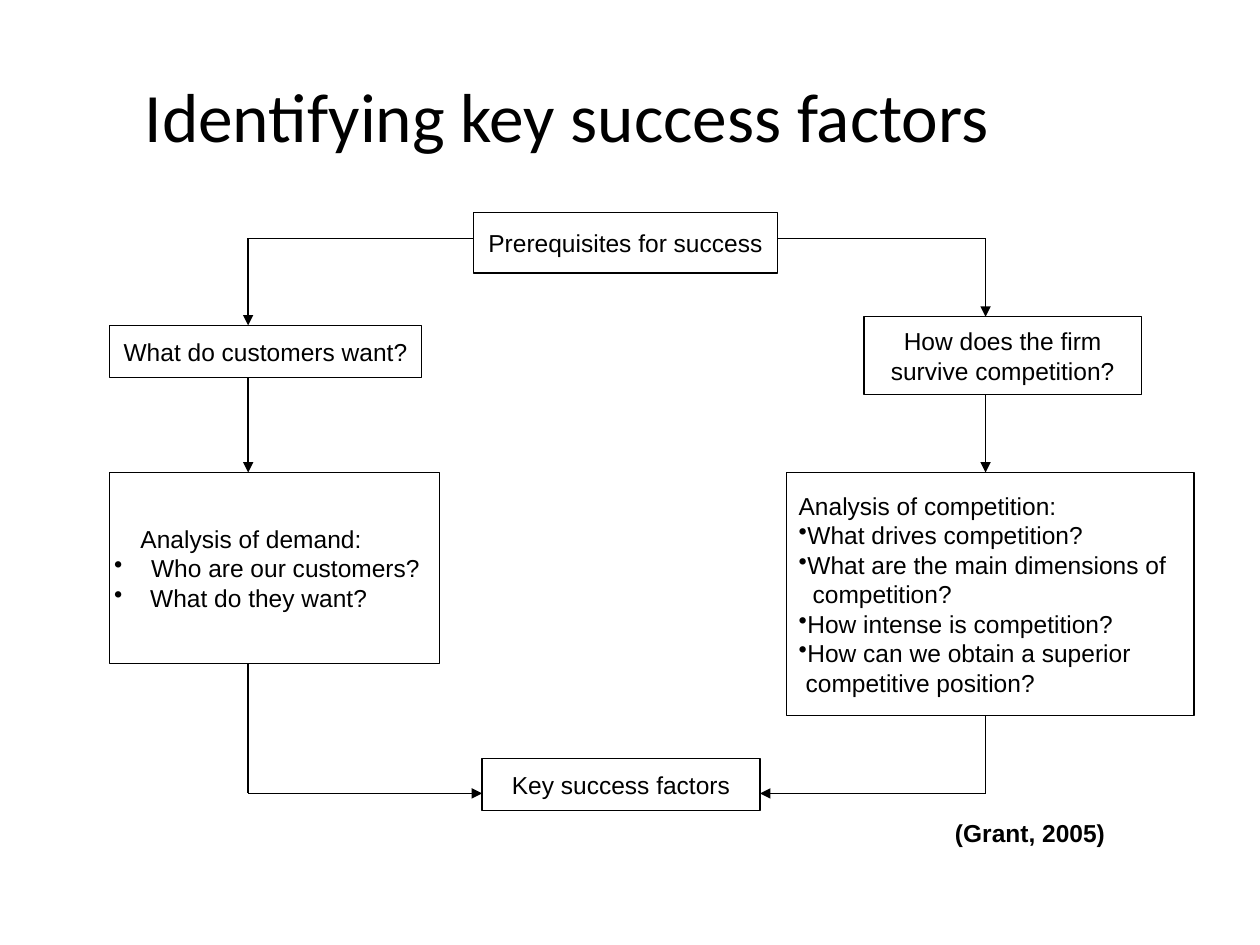
from itertools import pairwise

from lxml import etree
from pptx import Presentation
from pptx.dml.color import RGBColor
from pptx.enum.shapes import MSO_CONNECTOR, MSO_SHAPE
from pptx.enum.text import MSO_ANCHOR, PP_ALIGN
from pptx.oxml.ns import qn
from pptx.util import Pt

CENTER, LEFT = PP_ALIGN.CENTER, PP_ALIGN.LEFT
MIDDLE, TOP = MSO_ANCHOR.MIDDLE, MSO_ANCHOR.TOP
RECTANGLE, STRAIGHT = MSO_SHAPE.RECTANGLE, MSO_CONNECTOR.STRAIGHT

THEME = {
    "ink": RGBColor(0, 0, 0),
    "title_font": "Calibri", "title_size": 39.6,
    "body_font": "Arial", "body_size": 14,
    "line_width": 0.75,
}

# Each paragraph: text, left margin, hanging bullet width (0 = no bullet)
DEMAND = [
    ("Analysis of demand:", 15, 0),
    ("Who are our customers?", 21, 21),
    ("What do they want?", 20.5, 20.5),
]
COMPETITION = [
    ("Analysis of competition:", 0, 0),
    ("What drives competition?", 5, 5),
    ("What are the main dimensions of", 5, 5),
    ("competition?", 8, 0),
    ("How intense is competition?", 5, 5),
    ("How can we obtain a superior", 5, 5),
    ("competitive position?", 4, 0),
]

# Each box: left, top, width, height
BOXES = {
    "prerequisites": (270.7, 121.4, 173.6, 34.7),
    "customers": (62.6, 186, 178.4, 29.6),
    "survival": (493.7, 181, 158.6, 44.4),
    "demand": (62.6, 270, 188.6, 109),
    "competition": (449.3, 270, 233, 138.8),
    "factors": (275.5, 433.6, 158.8, 29.6),
}
LABELS = {
    "prerequisites": ["Prerequisites for success"],
    "customers": ["What do customers want?"],
    "survival": ["How does the firm", "survive competition?"],
    "factors": ["Key success factors"],
}
LISTS = {"demand": (DEMAND, 2.7), "competition": (COMPETITION, 7.2)}
# Each branch: question box, analysis box, x of its arrows
BRANCHES = [("customers", "demand", 141.8), ("survival", "competition", 563.2)]
TOP_LINE, BOTTOM_LINE = 136.2, 453.4


def set_text(shape, paragraphs, inset=3.6, align=CENTER, anchor=MIDDLE,
             font="body", bold=False):
    frame = shape.text_frame
    frame.word_wrap = True
    frame.vertical_anchor = anchor
    frame.margin_left = frame.margin_right = Pt(inset)
    frame.margin_top = frame.margin_bottom = Pt(3.6)
    for index, (text, margin, hanging) in enumerate(paragraphs):
        paragraph = frame.add_paragraph() if index else frame.paragraphs[0]
        paragraph.text = text
        paragraph.alignment = align
        paragraph.font.name = THEME[font + "_font"]
        paragraph.font.size = Pt(THEME[font + "_size"])
        paragraph.font.bold = bold
        paragraph.font.color.rgb = THEME["ink"]
        set_indent(paragraph, margin, hanging)


def set_indent(paragraph, margin, hanging):
    properties = paragraph._p.get_or_add_pPr()
    properties.set("marL", str(Pt(margin)))
    properties.set("indent", str(-Pt(hanging)))
    if hanging:
        bullet = etree.Element(qn("a:buChar"), char="•")
        properties.insert_element_before(bullet, "a:tabLst", "a:defRPr", "a:extLst")


def plain(texts):
    return [(text, 0, 0) for text in texts]


def add_box(slide, name):
    shape = slide.shapes.add_shape(RECTANGLE, *map(Pt, BOXES[name]))
    shape.shadow.inherit = False
    shape.fill.background()
    shape.line.color.rgb = THEME["ink"]
    shape.line.width = Pt(THEME["line_width"])
    if name in LISTS:
        paragraphs, inset = LISTS[name]
        set_text(shape, paragraphs, inset, LEFT)
    else:
        set_text(shape, plain(LABELS[name]))


def add_arrow(slide, *points):
    """Draw straight segments through the points, with a head on the last."""
    for start, end in pairwise(points):
        connector = slide.shapes.add_connector(STRAIGHT, *map(Pt, start + end))
        connector.line.color.rgb = THEME["ink"]
        connector.line.width = Pt(THEME["line_width"])
        etree.SubElement(connector._element.spPr, qn("a:effectLst"))
    etree.SubElement(connector.line._get_or_add_ln(), qn("a:tailEnd"), type="triangle")


def add_branch(slide, question, analysis, x):
    def near_side(name):
        left, _, width, _ = BOXES[name]
        return left if x < left else left + width

    def bottom(name):
        return BOXES[name][1] + BOXES[name][3]

    add_arrow(slide, (near_side("prerequisites"), TOP_LINE), (x, TOP_LINE),
              (x, BOXES[question][1]))
    add_arrow(slide, (x, bottom(question)), (x, BOXES[analysis][1]))
    add_arrow(slide, (x, bottom(analysis)), (x, BOTTOM_LINE),
              (near_side("factors"), BOTTOM_LINE))


def main():
    presentation = Presentation()
    presentation.slide_width, presentation.slide_height = Pt(720), Pt(540)
    slide = presentation.slides.add_slide(presentation.slide_layouts[6])

    title = slide.shapes.add_textbox(Pt(0), Pt(37.5), Pt(648), Pt(56))
    set_text(title, plain(["Identifying key success factors"]), font="title")
    for name in BOXES:
        add_box(slide, name)
    for branch in BRANCHES:
        add_branch(slide, *branch)
    citation = slide.shapes.add_textbox(Pt(538.6), Pt(463.7), Pt(113.8), Pt(24.5))
    set_text(citation, plain(["(Grant, 2005)"]), 7.2, LEFT, MIDDLE, bold=True)

    presentation.save("out.pptx")


if __name__ == "__main__":
    main()
